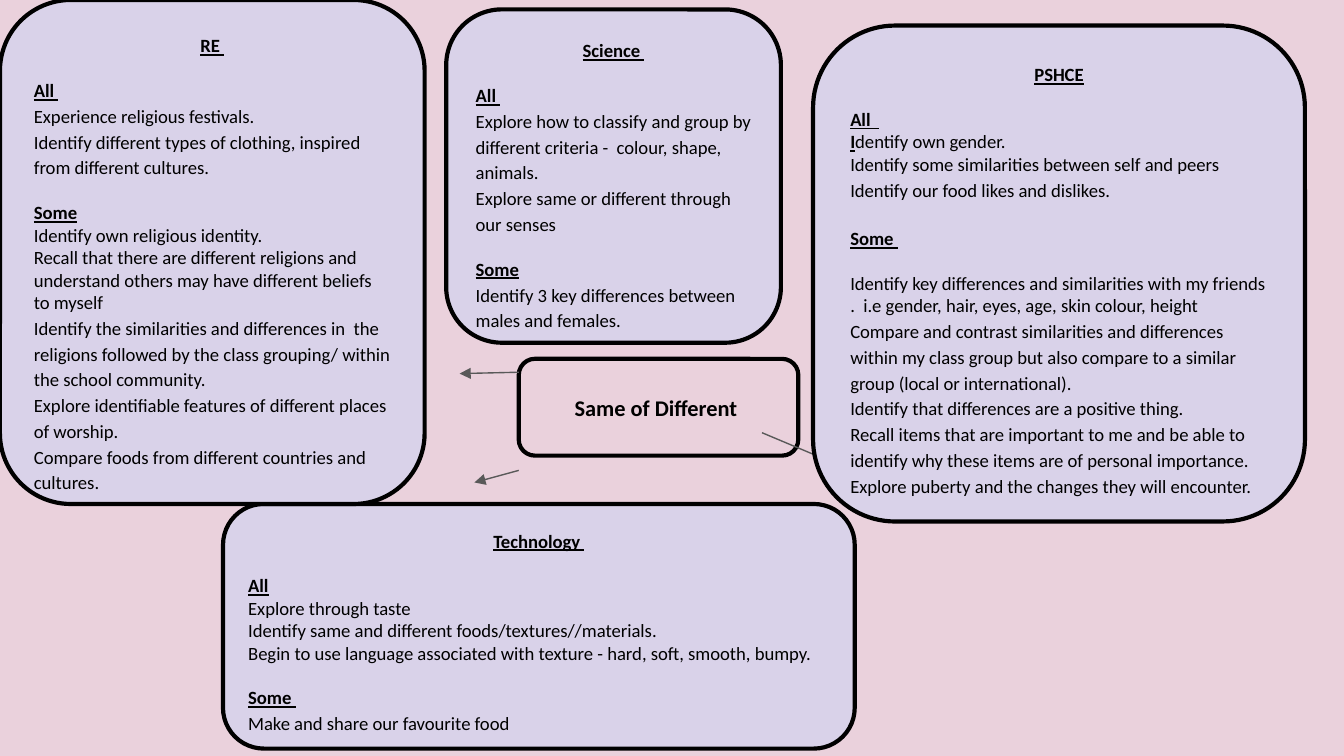
import pptx
import pptx.util
import pptx.dml.color
import pptx.enum.shapes
import pptx.enum.text
import pptx.oxml.ns
import lxml.etree
from pptx.util import Inches, Pt

THEME = {
    "font": "Calibri", "body": 10, "topic": 12, "outline": 2.25, "arrow_width": 0.75,
    "background": "EAD1DC", "card": "D9D2E9", "ink": "000000", "arrow": "595959",
}
SINGLE, WIDE = 1.0, 1.15   # line spacing
GAP, WIDE_GAP = 12, 14     # points above a new section

# Content: box, title, then (emphasised text, plain text, line spacing, space before)
TOPIC = ((3.86, 2.67, 2.08, 0.72), "Same of Different ")
TECHNOLOGY = ((1.66, 3.75, 4.7, 1.82), "Technology ", [
    ("All", "", SINGLE, GAP),
    ("", "Explore through taste", SINGLE, 0),
    ("", "Identify same and different foods/textures//materials.", SINGLE, 0),
    ("", "Begin to use language associated with texture - hard, soft, smooth, bumpy.", SINGLE, 0),
    ("Some ", "", SINGLE, GAP),
    ("", "Make and share our favourite food", WIDE, 0),
])
PSHCE = ((6.05, 0.19, 3.66, 3.69), "PSHCE", [
    ("All  ", "", SINGLE, GAP),
    ("I", "dentify own gender.", SINGLE, 0),
    ("", "Identify some similarities between self and peers", SINGLE, 0),
    ("", "Identify our food likes and dislikes.", WIDE, 0),
    ("Some ", "", SINGLE, WIDE_GAP),
    ("", "Identify key differences and similarities with my friends .  i.e gender, hair, eyes, age, "
         "skin colour, height", SINGLE, GAP),
    ("", "Compare and contrast similarities and differences within my class group but also compare "
         "to a similar group (local or international).", WIDE, 0),
    ("", "Identify that differences are a positive thing.", WIDE, 0),
    ("", "Recall items that are important to me and be able to identify why these items are of "
         "personal importance.", WIDE, 0),
    ("", "Explore puberty and the changes they will encounter.", WIDE, 0),
])
RE = ((0, 0, 3.16, 3.75), "RE ", [
    ("All ", "", SINGLE, GAP),
    ("", "Experience religious festivals.", WIDE, 0),
    ("", "Identify different types of clothing, inspired from different cultures.", WIDE, 0),
    ("Some", "", SINGLE, GAP),
    ("", "Identify own religious identity.", SINGLE, 0),
    ("", "Recall that there are different religions and understand others may have different "
         "beliefs to myself", SINGLE, 0),
    ("", "Identify the similarities and differences in  the religions followed by the class "
         "grouping/ within the school community.", WIDE, 0),
    ("", "Explore identifiable features of different places of worship.", WIDE, 0),
    ("", "Compare foods from different countries and cultures.", WIDE, 0),
])
SCIENCE = ((3.32, 0.07, 2.49, 2.48), "Science ", [
    ("All ", "", SINGLE, GAP),
    ("", "Explore how to classify and group by different criteria -  colour, shape, animals.", WIDE, 0),
    ("", "Explore same or different through our senses", WIDE, 0),
    ("Some", "", SINGLE, GAP),
    ("", "Identify 3 key differences between males and females.", WIDE, 0),
])
ARROW_TO_PSHCE = ((5.67, 3.22), (7.24, 3.88))
ARROW_TO_TECHNOLOGY = ((3.86, 3.5), (3.53, 3.59))
ARROW_TO_RE = ((3.86, 2.77), (3.42, 2.78))


def color(name):
    return pptx.dml.color.RGBColor.from_string(THEME[name])


def style_font(font, size):
    font.name = THEME["font"]
    font.size = Pt(THEME[size])
    font.color.rgb = color("ink")


def add_box(slide, box, title, fill, size, anchor):
    """Rounded box with a bold centred title; returns its text frame."""
    shape = slide.shapes.add_shape(
        pptx.enum.shapes.MSO_SHAPE.ROUNDED_RECTANGLE, *map(Inches, box))
    shape.shadow.inherit = False
    shape.fill.solid()
    shape.fill.fore_color.rgb = color(fill)
    shape.line.color.rgb = color("ink")
    shape.line.width = Pt(THEME["outline"])
    frame = shape.text_frame
    frame.word_wrap = True
    frame.vertical_anchor = anchor
    frame.margin_left = frame.margin_right = Inches(0.1)
    frame.margin_top = frame.margin_bottom = Inches(0.1)
    paragraph = frame.paragraphs[0]
    paragraph.text = title
    paragraph.alignment = pptx.enum.text.PP_ALIGN.CENTER
    style_font(paragraph.font, size)
    paragraph.font.bold = True
    return frame


def add_subject(slide, subject):
    box, title, lines = subject
    frame = add_box(slide, box, title, "card", "body", pptx.enum.text.MSO_ANCHOR.TOP)
    frame.paragraphs[0].font.underline = True
    for emphasised, plain, spacing, before in lines:
        paragraph = frame.add_paragraph()
        paragraph.alignment = pptx.enum.text.PP_ALIGN.LEFT
        paragraph.line_spacing = spacing
        paragraph.space_before = Pt(before)
        style_font(paragraph.font, "body")
        if emphasised:
            run = paragraph.add_run()
            run.text = emphasised
            run.font.bold = run.font.underline = True
        if plain:
            paragraph.add_run().text = plain


def add_arrow(slide, arrow):
    start, end = arrow
    connector = slide.shapes.add_connector(
        pptx.enum.shapes.MSO_CONNECTOR.STRAIGHT, *map(Inches, start + end))
    connector.line.color.rgb = color("arrow")
    connector.line.width = Pt(THEME["arrow_width"])
    qn = pptx.oxml.ns.qn
    line = connector._element.spPr.find(qn("a:ln"))
    lxml.etree.SubElement(line, qn("a:tailEnd"), type="triangle")
    lxml.etree.SubElement(connector._element.spPr, qn("a:effectLst"))


def main():
    presentation = pptx.Presentation()
    presentation.slide_width = Inches(10)
    presentation.slide_height = presentation.slide_width * 9 // 16
    slide = presentation.slides.add_slide(presentation.slide_layouts.get_by_name("Blank"))
    slide.background.fill.solid()
    slide.background.fill.fore_color.rgb = color("background")

    # Back to front: the cards cover the far ends of some arrows
    add_box(slide, *TOPIC, "background", "topic", pptx.enum.text.MSO_ANCHOR.MIDDLE)
    add_subject(slide, TECHNOLOGY)
    add_arrow(slide, ARROW_TO_PSHCE)
    add_arrow(slide, ARROW_TO_TECHNOLOGY)
    for subject in (PSHCE, RE, SCIENCE):
        add_subject(slide, subject)
    add_arrow(slide, ARROW_TO_RE)
    presentation.save("out.pptx")


if __name__ == "__main__":
    main()
